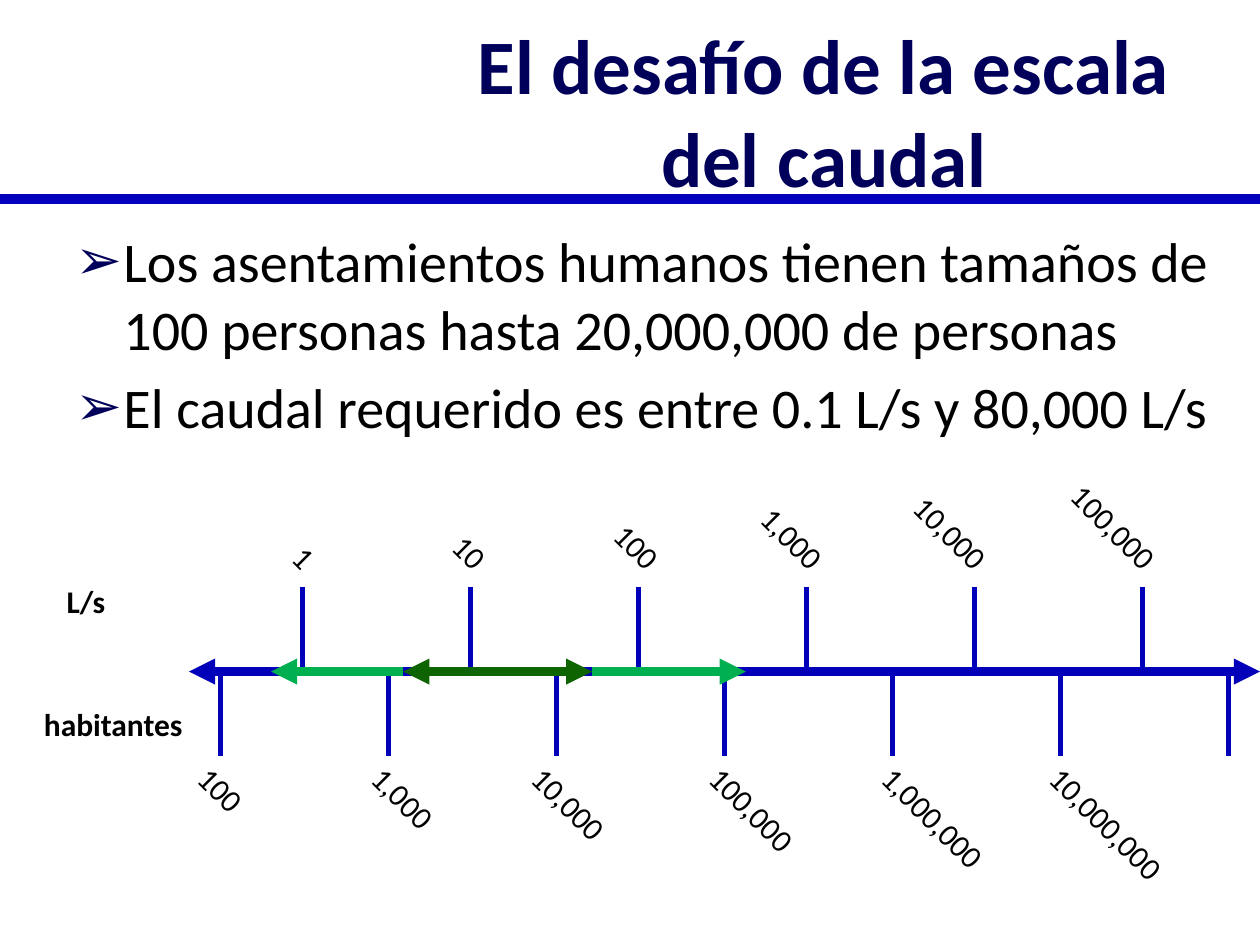
from math import cos, pi
from lxml import etree
from pptx import Presentation
from pptx.dml.color import RGBColor
from pptx.enum.shapes import MSO_CONNECTOR
from pptx.enum.text import MSO_ANCHOR, MSO_AUTO_SIZE, PP_ALIGN
from pptx.oxml.ns import qn
from pptx.util import Inches, Pt

LINE = MSO_CONNECTOR.STRAIGHT
LEFT, MID, RIGHT = PP_ALIGN.LEFT, PP_ALIGN.CENTER, PP_ALIGN.RIGHT
CENTRE, TOP = MSO_ANCHOR.MIDDLE, MSO_ANCHOR.TOP
FIXED = MSO_AUTO_SIZE.NONE

WIDE, HIGH = 10, 7.5
NAVY, BLUE, RULE = "00005A", "0300BA", "0300BE"
GREEN, DARK, BLACK = "00B050", "0E6400", "000000"

AXIS = 5.33            # height of the axis
STEP = 4 / 3           # one power of ten
TICK = 0.67
ROW = 0.4              # height of a label
FLOW, PEOPLE = 2.4, 1.75   # first tick of each scale

# text, box width, where the slanted text meets its tick
FLOWS = [("1", 0.33, 2.53), ("10", 0.46, 3.89), ("100", 0.59, 5.26),
         ("1,000", 0.78, 6.56), ("10,000", 0.9, 7.86),
         ("100,000", 1.03, 9.2)]
TOWNS = [("100", 0.59, 1.55), ("1,000", 0.78, 2.93), ("10,000", 0.9, 4.2),
         ("100,000", 1.03, 5.61), ("1,000,000", 1.22, 6.98),
         ("10,000,000", 1.35, 8.31)]
POINTS = ["Los asentamientos humanos tienen tamaños de 100 personas "
          "hasta 20,000,000 de personas",
          "El caudal requerido es entre 0.1 L/s y 80,000 L/s"]


def paint(code):
    return RGBColor.from_string(code)


def place(shape, x, y, w, h):
    shape.left, shape.top = Inches(x), Inches(y)
    shape.width, shape.height = Inches(w), Inches(h)


def write(para, text, size=18, color=BLACK, bold=False, align=LEFT):
    para.alignment = align
    run = para.add_run()
    run.text = text
    font = run.font
    font.name, font.size, font.bold = "Calibri", Pt(size), bold
    font.color.rgb = paint(color)


def mark(para):
    """Give a paragraph its hanging arrow bullet."""
    props = para._p.get_or_add_pPr()
    props.set("marL", str(Inches(0.38)))
    props.set("indent", str(-Inches(0.38)))
    tint = etree.SubElement(props, qn("a:buClr"))
    etree.SubElement(tint, qn("a:srgbClr"), val=NAVY)
    etree.SubElement(props, qn("a:buChar"), char="➢")


def line(slide, start, end, color=BLUE, width=3, tips=()):
    item = slide.shapes.add_connector(LINE, *map(Inches, start + end))
    item.line.color.rgb = paint(color)
    item.line.width = Pt(width)
    for tip in tips:
        etree.SubElement(item.line._ln, qn(tip), type="triangle")
    etree.SubElement(item._element.spPr, qn("a:effectLst"))


def label(slide, text, x, y, w, turn=0, **form):
    box = slide.shapes.add_textbox(*map(Inches, (x, y, w, ROW)))
    box.rotation = turn
    box.text_frame.word_wrap = False
    write(box.text_frame.paragraphs[0], text, **form)


def scale(slide, first, count, names, side, level, align):
    """Draw ticks and slanted names; side is -1 above the axis, 1 below."""
    for i in range(count):
        x = first + i * STEP
        line(slide, (x, AXIS), (x, AXIS + side * TICK))
    for text, w, end in names:
        shift = side * w / 2 * cos(pi / 4)
        label(slide, text, end + shift - w / 2, level + shift - ROW / 2, w,
              turn=45, align=align)


def head(slide):
    line(slide, (0, 1.58), (WIDE, 1.58), RULE, 6)
    title = slide.shapes.title
    place(title, 3.33, 0.25, 6.42, 1.25)
    frame = title.text_frame
    frame.auto_size, frame.vertical_anchor = FIXED, CENTRE
    write(frame.paragraphs[0], "El desafío de la escala del caudal",
          size=44, color=NAVY, bold=True, align=MID)


def body(slide):
    holder = slide.placeholders[1]
    place(holder, 0.5, 1.75, 9.25, 2.42)
    frame = holder.text_frame
    frame.auto_size, frame.vertical_anchor = FIXED, TOP
    for i, text in enumerate(POINTS):
        para = frame.add_paragraph() if i else frame.paragraphs[0]
        mark(para)
        para.space_before = Pt(6.4 if i else 0)
        write(para, text, size=32)


def main():
    deck = Presentation()
    deck.slide_width, deck.slide_height = Inches(WIDE), Inches(HIGH)
    slide = deck.slides.add_slide(deck.slide_layouts[1])
    head(slide)
    body(slide)

    both = ("a:headEnd", "a:tailEnd")
    scale(slide, FLOW, 6, FLOWS, -1, 4.54, RIGHT)
    line(slide, (1.5, AXIS), (WIDE, AXIS), width=5, tips=both)
    scale(slide, PEOPLE, 7, TOWNS, 1, 6.06, LEFT)
    label(slide, "L/s", 0.43, 4.57, 0.51, bold=True)
    label(slide, "habitantes", 0.25, 5.55, 1.31, bold=True)

    line(slide, (3.2, AXIS), (4.7, AXIS), DARK, 5, both)
    for tip, base in ((2.15, 3.2), (5.92, 4.7)):
        line(slide, (tip, AXIS), (base, AXIS), GREEN, 5, both[:1])
    deck.save("out.pptx")


if __name__ == "__main__":
    main()
